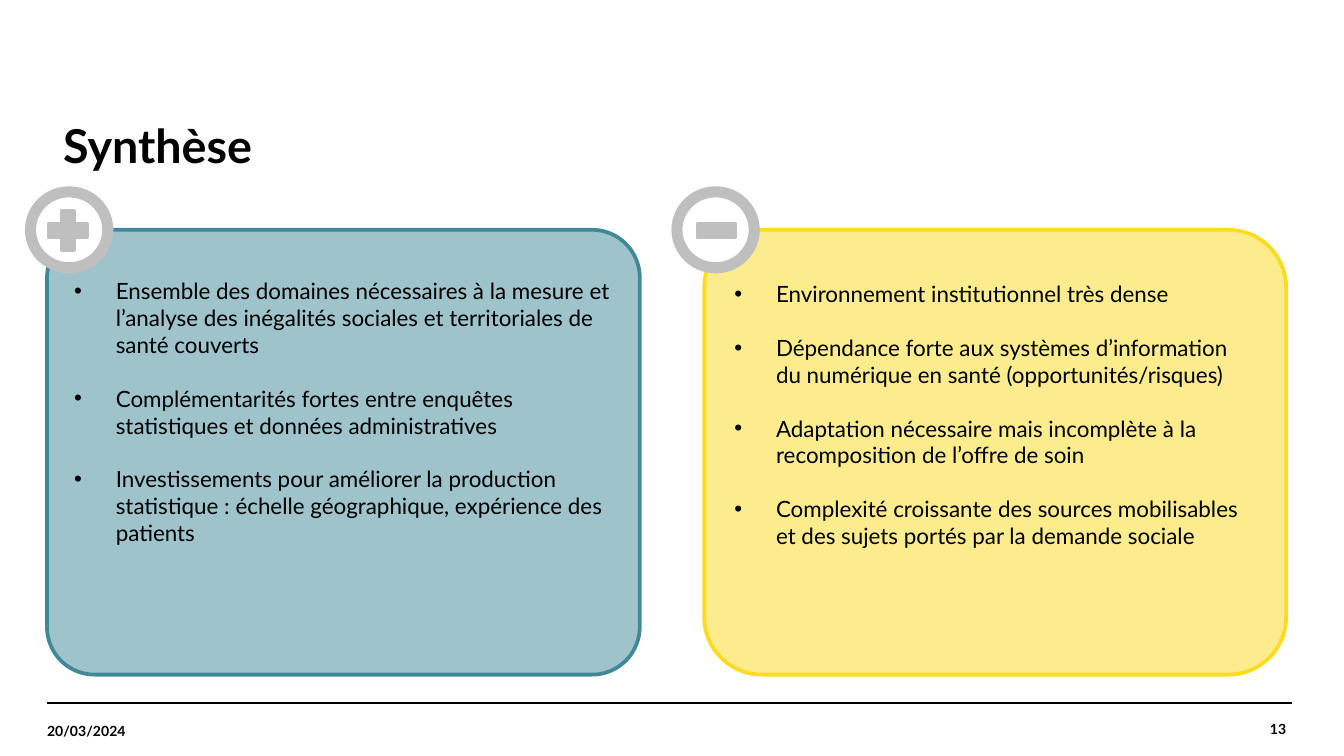
import pptx
import pptx.dml.color
import pptx.enum.shapes
import pptx.enum.text
import pptx.oxml.ns
import pptx.util
from lxml import etree
from pptx.util import Inches

ANCHOR = pptx.enum.text.MSO_ANCHOR
ALIGN = pptx.enum.text.PP_ALIGN
SHAPES = pptx.enum.shapes.MSO_SHAPE
qualified = pptx.oxml.ns.qn


def color(hex_value):
    return pptx.dml.color.RGBColor.from_string(hex_value)


def write_text(paragraph, text, size=12, bold=False, align=ALIGN.LEFT,
               bullet=False, space_before=0):
    paragraph.alignment = align
    paragraph.space_before = pptx.util.Pt(space_before)
    if bullet:
        properties = paragraph._p.get_or_add_pPr()
        properties.set("marL", str(Inches(0.31)))
        properties.set("indent", str(-Inches(0.31)))
        etree.SubElement(properties, qualified("a:buFont")).set("typeface", "Arial")
        etree.SubElement(properties, qualified("a:buChar")).set("char", "•")
    run = paragraph.add_run()
    run.text = text
    run.font.name = "Lato"
    run.font.size = pptx.util.Pt(size)
    run.font.bold = bold
    run.font.color.rgb = color("000000")


presentation = pptx.Presentation()
presentation.slide_width = Inches(10)
presentation.slide_height = Inches(10) * 9 // 16
slide = presentation.slides.add_slide(presentation.slide_layouts[5])

for line_left in (0.35, 0.39):
    footer_line = slide.shapes.add_connector(
        pptx.enum.shapes.MSO_CONNECTOR.STRAIGHT,
        Inches(line_left), Inches(5.23), Inches(line_left + 9.22), Inches(5.23))
    footer_line.line.color.rgb = color("000000")
    footer_line.line.width = pptx.util.Pt(0.8)
    etree.SubElement(footer_line._element.spPr, qualified("a:effectLst"))

footers = [
    ("13", 8.09, 5.23, 1.48, 0.39, ALIGN.RIGHT),
    ("20/03/2024", 0.35, 5.25, 1.28, 0.38, ALIGN.LEFT),
]
for text, left, top, width, height, align in footers:
    box = slide.shapes.add_textbox(Inches(left), Inches(top), Inches(width), Inches(height))
    frame = box.text_frame
    frame.word_wrap = True
    frame.vertical_anchor = ANCHOR.MIDDLE
    frame.margin_left = frame.margin_right = frame.margin_top = frame.margin_bottom = 0
    write_text(frame.paragraphs[0], text, size=7.5, bold=True, align=align)

title = slide.shapes.title
title.left, title.top = Inches(0.35), Inches(0.81)
title.width, title.height = Inches(9.21), Inches(0.59)
title.text_frame.vertical_anchor = ANCHOR.MIDDLE
title.text_frame.margin_left = Inches(0.12)
title_paragraph = title.text_frame.paragraphs[0]
title_paragraph.line_spacing = 0.9
write_text(title_paragraph, "Synthèse", size=25, bold=True)

panels = [
    (5.24, 4.33, 0.13, "FDDB1E", [
        "Environnement institutionnel très dense",
        "Dépendance forte aux systèmes d’information du numérique en santé (opportunités/risques)",
        "Adaptation nécessaire mais incomplète à la recomposition de l’offre de soin",
        "Complexité croissante des sources mobilisables et des sujets portés par la demande sociale",
    ]),
    (0.35, 4.41, 0.107, "418998", [
        "Ensemble des domaines nécessaires à la mesure et l’analyse des inégalités sociales et territoriales de santé couverts",
        "Complémentarités fortes entre enquêtes statistiques et données administratives",
        "Investissements pour améliorer la production statistique : échelle géographique, expérience des patients",
    ]),
]
for left, width, rounding, panel_color, points in panels:
    panel = slide.shapes.add_shape(
        SHAPES.ROUNDED_RECTANGLE, Inches(left), Inches(1.71), Inches(width), Inches(3.31))
    panel.adjustments[0] = rounding
    panel.shadow.inherit = False
    panel.fill.solid()
    panel.fill.fore_color.rgb = color(panel_color)
    fill_color = panel._element.spPr.find(qualified("a:solidFill"))[0]
    etree.SubElement(fill_color, qualified("a:alpha")).set("val", "50000")
    panel.line.color.rgb = color(panel_color)
    panel.line.width = pptx.util.Pt(2)
    frame = panel.text_frame
    frame.word_wrap = True
    frame.vertical_anchor = ANCHOR.TOP
    frame.margin_top = Inches(0.25)
    for index, point in enumerate(points):
        paragraph = frame.add_paragraph() if index else frame.paragraphs[0]
        write_text(paragraph, point, bullet=True, space_before=14.4 if index else 0)

badge_parts = [
    (SHAPES.OVAL, 0.23, 1.44, 0.56, 0.54, "FFFFFF"),
    (SHAPES.MATH_PLUS, 0.31, 1.52, 0.39, 0.39, "BFBFBF"),
    (SHAPES.DONUT, 0.2, 1.4, 0.63, 0.62, "BFBFBF"),
    (SHAPES.OVAL, 5.05, 1.44, 0.56, 0.54, "FFFFFF"),
    (SHAPES.DONUT, 5.01, 1.4, 0.63, 0.62, "BFBFBF"),
    (SHAPES.MATH_MINUS, 5.14, 1.51, 0.38, 0.41, "BFBFBF"),
]
for kind, left, top, width, height, part_color in badge_parts:
    part = slide.shapes.add_shape(
        kind, Inches(left), Inches(top), Inches(width), Inches(height))
    if kind == SHAPES.DONUT:
        part.adjustments[0] = 0.088
    part.shadow.inherit = False
    part.fill.solid()
    part.fill.fore_color.rgb = color(part_color)
    part.line.color.rgb = color(part_color)
    part.line.width = pptx.util.Pt(2)

presentation.save("out.pptx")
